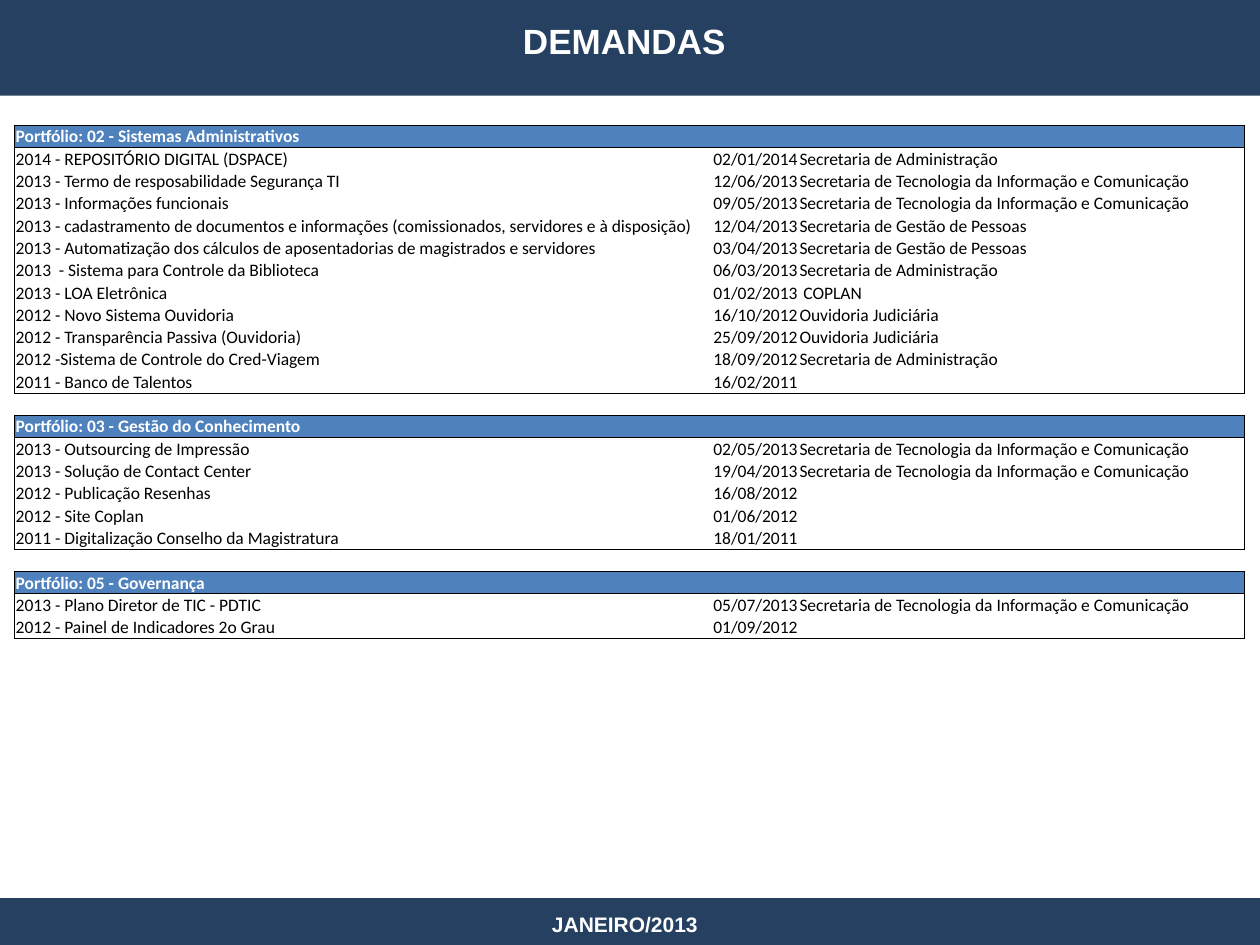
from dataclasses import dataclass

from lxml import etree
from pptx import Presentation
from pptx.dml.color import RGBColor
from pptx.enum.shapes import MSO_SHAPE
from pptx.enum.text import MSO_ANCHOR, PP_ALIGN
from pptx.oxml.ns import qn
from pptx.util import Pt

RECT = MSO_SHAPE.RECTANGLE
MIDDLE, BOTTOM = MSO_ANCHOR.MIDDLE, MSO_ANCHOR.BOTTOM
LEFT, CENTER, RIGHT = PP_ALIGN.LEFT, PP_ALIGN.CENTER, PP_ALIGN.RIGHT


@dataclass(frozen=True)
class Theme:
    """Colours, fonts and type sizes of the slide."""
    bar: str = "254061"
    band: str = "4F81BD"
    light: str = "FFFFFF"
    dark: str = "000000"
    heading_font: str = "Arial"
    body_font: str = "Calibri"
    title_size: int = 20
    footer_size: int = 12
    body_size: int = 10
    border: float = 0.5


THEME = Theme()
ADMIN = "Secretaria de Administração"
TIC = "Secretaria de Tecnologia da Informação e Comunicação"
PEOPLE = "Secretaria de Gestão de Pessoas"
OMBUDSMAN = "Ouvidoria Judiciária"
COLUMNS = (391, 56.9, 254.9)
ROW_HEIGHT = 12.6

PORTFOLIOS = [
    ("Portfólio: 02 - Sistemas Administrativos", [
        ("2014 - REPOSITÓRIO DIGITAL (DSPACE)", "02/01/2014", ADMIN),
        ("2013 - Termo de resposabilidade Segurança TI", "12/06/2013", TIC),
        ("2013 - Informações funcionais", "09/05/2013", TIC),
        ("2013 - cadastramento de documentos e informações "
         "(comissionados, servidores e à disposição)", "12/04/2013", PEOPLE),
        ("2013 - Automatização dos cálculos de aposentadorias "
         "de magistrados e servidores", "03/04/2013", PEOPLE),
        ("2013  - Sistema para Controle da Biblioteca", "06/03/2013", ADMIN),
        ("2013 - LOA Eletrônica", "01/02/2013", " COPLAN"),
        ("2012 - Novo Sistema Ouvidoria", "16/10/2012", OMBUDSMAN),
        ("2012 - Transparência Passiva (Ouvidoria)", "25/09/2012", OMBUDSMAN),
        ("2012 -Sistema de Controle do Cred-Viagem", "18/09/2012", ADMIN),
        ("2011 - Banco de Talentos", "16/02/2011", ""),
    ]),
    ("Portfólio: 03 - Gestão do Conhecimento", [
        ("2013 - Outsourcing de Impressão", "02/05/2013", TIC),
        ("2013 - Solução de Contact Center", "19/04/2013", TIC),
        ("2012 - Publicação Resenhas", "16/08/2012", ""),
        ("2012 - Site Coplan", "01/06/2012", ""),
        ("2011 - Digitalização Conselho da Magistratura", "18/01/2011", ""),
    ]),
    ("Portfólio: 05 - Governança", [
        ("2013 - Plano Diretor de TIC - PDTIC", "05/07/2013", TIC),
        ("2012 - Painel de Indicadores 2o Grau", "01/09/2012", ""),
    ]),
]


def set_attrs(obj, values):
    """Set each attribute of an object from a dict."""
    for name, value in values.items():
        setattr(obj, name, value)


def write(p, text, size, font, color, bold, align):
    """Write one formatted run in a paragraph and return it."""
    p.alignment = align
    r = p.add_run()
    r.text = text
    set_attrs(r.font, {"size": Pt(size), "name": font, "bold": bold})
    r.font.color.rgb = RGBColor.from_string(color)
    return r


def add_text_shadow(r):
    """Give a run a soft shadow to the lower right."""
    effects = etree.Element(qn("a:effectLst"))
    shadow = etree.SubElement(effects, qn("a:outerShdw"), blurRad="38100",
                              dist="38100", dir="2700000", algn="tl")
    color = etree.SubElement(shadow, qn("a:srgbClr"), val=THEME.dark)
    etree.SubElement(color, qn("a:alpha"), val="43000")
    r.font._element.find(qn("a:solidFill")).addnext(effects)


def add_bar(s, box):
    """Add a plain full-width bar."""
    sp = s.shapes.add_shape(RECT, *map(Pt, box))
    sp.shadow.inherit = False
    sp.fill.solid()
    sp.fill.fore_color.rgb = RGBColor.from_string(THEME.bar)
    sp.line.fill.background()
    return sp


def fill_heading(sp, box, text, size):
    """Place a shape and write its centred white heading."""
    set_attrs(sp, dict(zip(("left", "top", "width", "height"), map(Pt, box))))
    tf = sp.text_frame
    set_attrs(tf, {"word_wrap": True, "vertical_anchor": MIDDLE})
    r = write(tf.paragraphs[0], text, size, THEME.heading_font,
              THEME.light, True, CENTER)
    add_text_shadow(r)


def add_header(s, box):
    """Build the top bar and the slide title on it."""
    left, top, width, height = box
    bar = add_bar(s, box)
    title = s.shapes.title
    bar._element.addnext(title._element)
    fill_heading(title, (left + 36, top + 4.3, width - 78.5, height - 15.8),
                 "DEMANDAS", THEME.title_size)


def add_footer(s, box):
    """Build the bottom bar and the date on it."""
    left, top, width, height = box
    add_bar(s, box)
    area = (left - 2.9, top + 0.7, width, height + 1.4)
    sp = s.shapes.add_textbox(*map(Pt, area))
    fill_heading(sp, area, "JANEIRO/2013", THEME.footer_size)


def set_borders(cell, sides):
    """Draw the named sides of a cell and clear the others."""
    props = cell._tc.get_or_add_tcPr()
    for side in "LRTB":
        ln = etree.SubElement(props, qn(f"a:ln{side}"),
                              w=str(Pt(THEME.border)))
        if side in sides:
            fill = etree.SubElement(ln, qn("a:solidFill"))
            etree.SubElement(fill, qn("a:srgbClr"), val=THEME.dark)
        else:
            etree.SubElement(ln, qn("a:noFill"))


def fill_row(cells, texts, sides="", header=False):
    """Fill one table row; sides lists the borders of the whole row."""
    for i, (cell, text) in enumerate(zip(cells, texts)):
        hidden = {0: "R", 1: "LR", 2: "L"}[i]
        set_borders(cell, set(sides) - set(hidden))
        set_attrs(cell, {"margin_left": Pt(0.6), "margin_right": Pt(0.6),
                         "margin_top": Pt(0.6), "margin_bottom": Pt(0),
                         "vertical_anchor": BOTTOM})
        if header:
            cell.fill.solid()
            cell.fill.fore_color.rgb = RGBColor.from_string(THEME.band)
        else:
            cell.fill.background()
        p = cell.text_frame.paragraphs[0]
        if text:
            write(p, text, THEME.body_size, THEME.body_font,
                  THEME.light if header else THEME.dark, header,
                  RIGHT if i == 1 else LEFT)
        else:
            etree.SubElement(p._p, qn("a:endParaRPr"),
                             sz=str(THEME.body_size * 100))


def add_demands(s, left, top):
    """Build the table of demands, one bordered block per portfolio."""
    rows = []
    for name, demands in PORTFOLIOS:
        if rows:
            rows.append((("", "", ""), "TB", False))
        rows.append(((name, "", ""), "LRTB", True))
        for i, demand in enumerate(demands):
            sides = "LR" + "T" * (i == 0) + "B" * (i == len(demands) - 1)
            rows.append((demand, sides, False))
    size = (sum(COLUMNS), ROW_HEIGHT * len(rows))
    table = s.shapes.add_table(len(rows), len(COLUMNS),
                               *map(Pt, (left, top, *size))).table
    set_attrs(table, {"first_row": False, "horz_banding": False})
    for column, width in zip(table.columns, COLUMNS):
        column.width = Pt(width)
    for row, (texts, sides, header) in zip(table.rows, rows):
        row.height = Pt(ROW_HEIGHT)
        fill_row(row.cells, texts, sides, header)


def main():
    """Build the slide and save it."""
    prs = Presentation()
    set_attrs(prs, {"slide_width": Pt(720), "slide_height": Pt(540)})
    s = prs.slides.add_slide(prs.slide_layouts[5])
    add_footer(s, (0, 513.2, 720, 26.8))
    add_header(s, (0, -0.7, 720, 55.4))
    add_demands(s, 8.4, 71.5)
    prs.save("out.pptx")


if __name__ == "__main__":
    main()
